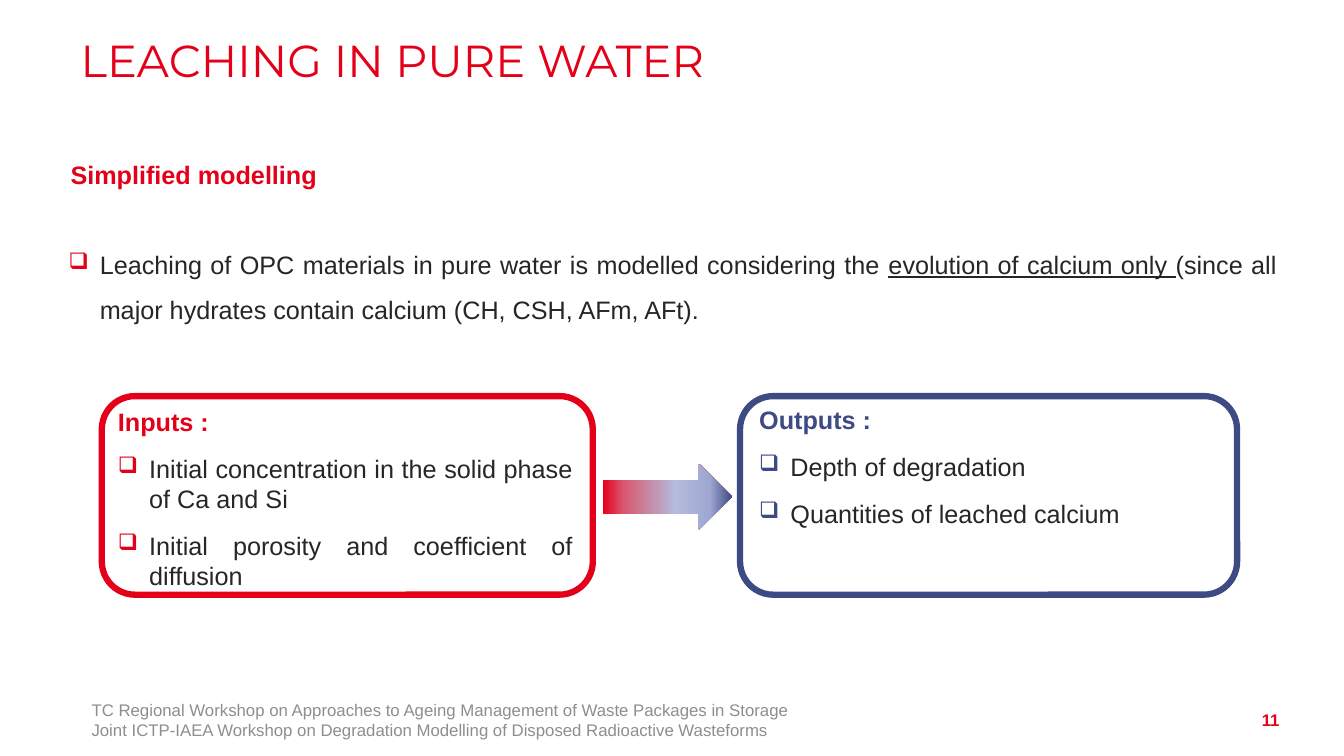
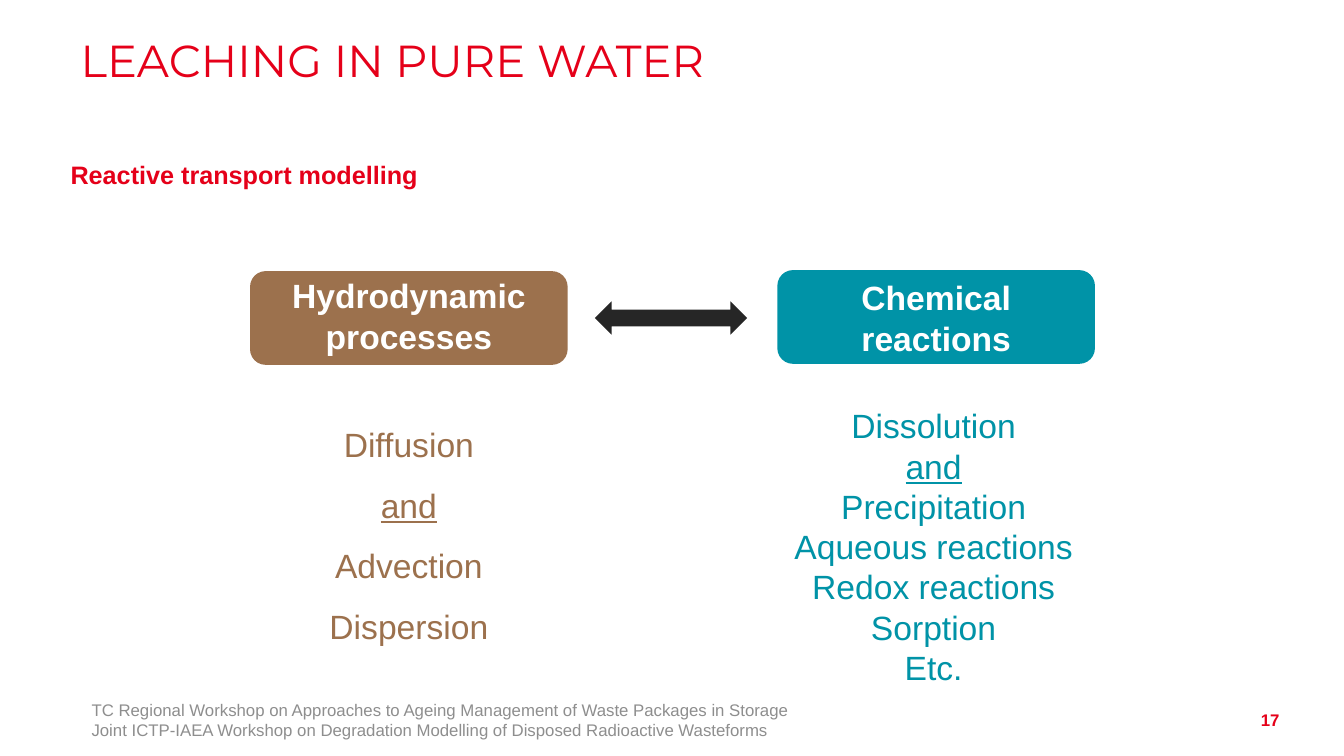
from dataclasses import dataclass

from lxml import etree
from pptx import Presentation
from pptx.dml.color import RGBColor
from pptx.enum.shapes import MSO_SHAPE
from pptx.enum.text import MSO_ANCHOR, PP_ALIGN
from pptx.oxml.ns import qn
from pptx.util import Inches, Pt

LEFT, CENTER, RIGHT, JUSTIFY = PP_ALIGN.LEFT, PP_ALIGN.CENTER, PP_ALIGN.RIGHT, PP_ALIGN.JUSTIFY
TOP, MIDDLE = MSO_ANCHOR.TOP, MSO_ANCHOR.MIDDLE
ROUNDED = MSO_SHAPE.ROUNDED_RECTANGLE
RIGHT_ARROW = MSO_SHAPE.RIGHT_ARROW
DOUBLE_ARROW = MSO_SHAPE.LEFT_RIGHT_ARROW


@dataclass(frozen=True)
class Theme:
    red: str = "E50019"
    blue: str = "3E4A83"
    teal: str = "0093A7"
    brown: str = "9C714D"
    dark: str = "262626"
    grey: str = "8E8E8E"
    white: str = "FFFFFF"
    body_font: str = "Arial"
    title_font: str = "Montserrat"
    title_size: int = 32
    large_size: int = 24
    body_size: int = 18
    footer_size: int = 12
    bullet_indent: float = 0.31
    paragraph_gap: int = 12
    frame_width: float = 4.5


THEME = Theme()

TITLE = "LEACHING IN PURE WATER"
FOOTER = [
    "TC Regional Workshop on Approaches to Ageing Management of Waste Packages in Storage",
    "Joint ICTP-IAEA Workshop on Degradation Modelling of Disposed Radioactive Wasteforms",
]

SIMPLIFIED = {
    "number": "11",
    "heading": "Simplified modelling",
    "statement": [
        "Leaching of OPC materials in pure water is modelled considering the ",
        ("evolution of calcium only ", {"underline": True}),
        "(since all major hydrates contain calcium (CH, CSH, AFm, AFt).",
    ],
    "panels": [
        {
            "label": "Inputs :",
            "items": [
                "Initial concentration in the solid phase of Ca and Si",
                "Initial porosity and coefficient of diffusion",
            ],
            "color": THEME.red,
            "frame": (1.01, 3.93, 4.87, 1.97),
            "text": (1.17, 3.98, 4.51, 1.77),
        },
        {
            "label": "Outputs :",
            "items": ["Depth of degradation", "Quantities of leached calcium"],
            "color": THEME.blue,
            "frame": (7.34, 3.93, 4.93, 1.97),
            "text": (7.53, 3.96, 4.62, 1.78),
        },
    ],
    "arrow_stops": [
        (0, THEME.red), (16, "D95770"), (56, "B4BBDC"), (83, "9EA7D1"), (100, THEME.blue),
    ],
}

REACTIVE = {
    "number": "17",
    "heading": "Reactive transport modelling",
    "processes": [
        {
            "label": "Hydrodynamic processes",
            "items": ["Diffusion", "and", "Advection", "Dispersion"],
            "color": THEME.brown,
            "line_spacing": 1.5,
            "box": (2.48, 2.69, 3.15, 0.93),
            "label_top": 2.68,
            "list": (2.48, 3.96, 3.15, 2.6),
        },
        {
            "label": "Chemical reactions",
            "items": [
                "Dissolution", "and", "Precipitation", "Aqueous reactions",
                "Redox reactions", "Sorption", "Etc.",
            ],
            "color": THEME.teal,
            "line_spacing": None,
            "box": (7.71, 2.68, 3.15, 0.93),
            "label_top": 2.7,
            "list": (7.16, 3.97, 4.2, 2.93),
        },
    ],
}


def add_bullet(paragraph, color):
    properties = paragraph._p.get_or_add_pPr()
    properties.set("marL", str(Inches(THEME.bullet_indent)))
    properties.set("indent", str(-Inches(THEME.bullet_indent)))
    bullet_color = etree.SubElement(properties, qn("a:buClr"))
    etree.SubElement(bullet_color, qn("a:srgbClr"), val=color)
    etree.SubElement(properties, qn("a:buSzPct"), val="90000")
    etree.SubElement(properties, qn("a:buChar"), char="❑")


def add_text(slide, place, paragraphs, *, size=THEME.body_size, font=THEME.body_font,
             color=THEME.dark, bold=False, align=LEFT, anchor=TOP, side_inset=0,
             line_spacing=None, gap=0):
    frame = slide.shapes.add_textbox(*map(Inches, place)).text_frame
    frame.word_wrap = True
    frame.vertical_anchor = anchor
    frame.margin_left = frame.margin_right = Inches(side_inset)
    frame.margin_top = frame.margin_bottom = Inches(0.05)
    for index, content in enumerate(paragraphs):
        if not isinstance(content, dict):
            content = {"runs": [content]}
        paragraph = frame.paragraphs[0] if index == 0 else frame.add_paragraph()
        if "bullet" in content:
            add_bullet(paragraph, content["bullet"])
        paragraph.alignment = align
        if line_spacing:
            paragraph.line_spacing = line_spacing
        if index and gap:
            paragraph.space_before = Pt(gap)
        for part in content["runs"]:
            words, changes = (part, {}) if isinstance(part, str) else part
            run = paragraph.add_run()
            run.text = words
            run.font.name = font
            run.font.size = Pt(size)
            run.font.bold = changes.get("bold", bold)
            run.font.underline = changes.get("underline", False)
            run.font.color.rgb = RGBColor.from_string(changes.get("color", color))


def add_block(slide, kind, place, fill=None, line=None):
    shape = slide.shapes.add_shape(kind, *map(Inches, place))
    shape.shadow.inherit = False
    if fill:
        shape.fill.solid()
        shape.fill.fore_color.rgb = RGBColor.from_string(fill)
    else:
        shape.fill.background()
    if line:
        shape.line.color.rgb = RGBColor.from_string(line)
        shape.line.width = Pt(THEME.frame_width)
    else:
        shape.line.fill.background()
    return shape


def set_gradient(shape, stops):
    shape.fill.gradient()
    shape.fill.gradient_angle = 0
    stop_list = shape._element.spPr.find(qn("a:gradFill")).find(qn("a:gsLst"))
    for old_stop in list(stop_list):
        stop_list.remove(old_stop)
    for position, color in stops:
        stop = etree.SubElement(stop_list, qn("a:gs"), pos=str(position * 1000))
        etree.SubElement(stop, qn("a:srgbClr"), val=color)


def add_base_slide(presentation, content):
    slide = presentation.slides.add_slide(presentation.slide_layouts[6])
    add_text(slide, (0.8, 0.34, 11.73, 0.95), [TITLE], size=THEME.title_size,
             font=THEME.title_font, color=THEME.red, line_spacing=0.9)
    add_text(slide, (0.7, 1.53, 11.73, 0.71), [content["heading"]],
             color=THEME.red, bold=True)
    add_text(slide, (0.81, 6.94, 9.67, 0.4), FOOTER, size=THEME.footer_size,
             color=THEME.grey, anchor=MIDDLE, side_inset=0.1)
    add_text(slide, (12.03, 6.94, 0.76, 0.4), [content["number"]], size=THEME.footer_size,
             color=THEME.red, bold=True, align=RIGHT, anchor=MIDDLE, side_inset=0.1)
    return slide


def build_simplified(presentation):
    slide = add_base_slide(presentation, SIMPLIFIED)
    add_text(slide, (0.68, 2.27, 11.98, 1.2),
             [{"runs": SIMPLIFIED["statement"], "bullet": THEME.red}],
             align=JUSTIFY, line_spacing=1.5)
    for panel in SIMPLIFIED["panels"]:
        color = panel["color"]
        label = (panel["label"], {"bold": True, "color": color})
        items = [{"runs": [item], "bullet": color} for item in panel["items"]]
        add_block(slide, ROUNDED, panel["frame"], line=color)
        add_text(slide, panel["text"], [label, *items], align=JUSTIFY,
                 gap=THEME.paragraph_gap)
    arrow = add_block(slide, RIGHT_ARROW, (5.98, 4.6, 1.28, 0.66))
    set_gradient(arrow, SIMPLIFIED["arrow_stops"])


def build_reactive(presentation):
    slide = add_base_slide(presentation, REACTIVE)
    for process in REACTIVE["processes"]:
        left, _, width, _ = process["box"]
        add_block(slide, ROUNDED, process["box"], fill=process["color"])
        add_text(slide, (left, process["label_top"], width, 0.91), [process["label"]],
                 size=THEME.large_size, color=THEME.white, bold=True, align=CENTER,
                 side_inset=0.1)
        items = [(item, {"underline": item == "and"}) for item in process["items"]]
        add_text(slide, process["list"], items, size=THEME.large_size,
                 color=process["color"], align=CENTER, side_inset=0.1,
                 line_spacing=process["line_spacing"])
    add_block(slide, DOUBLE_ARROW, (5.9, 2.99, 1.51, 0.33), fill=THEME.dark)


def main():
    presentation = Presentation()
    presentation.slide_width = Inches(13.33)
    presentation.slide_height = Inches(7.5)
    build_simplified(presentation)
    build_reactive(presentation)
    presentation.save("out.pptx")


if __name__ == "__main__":
    main()
